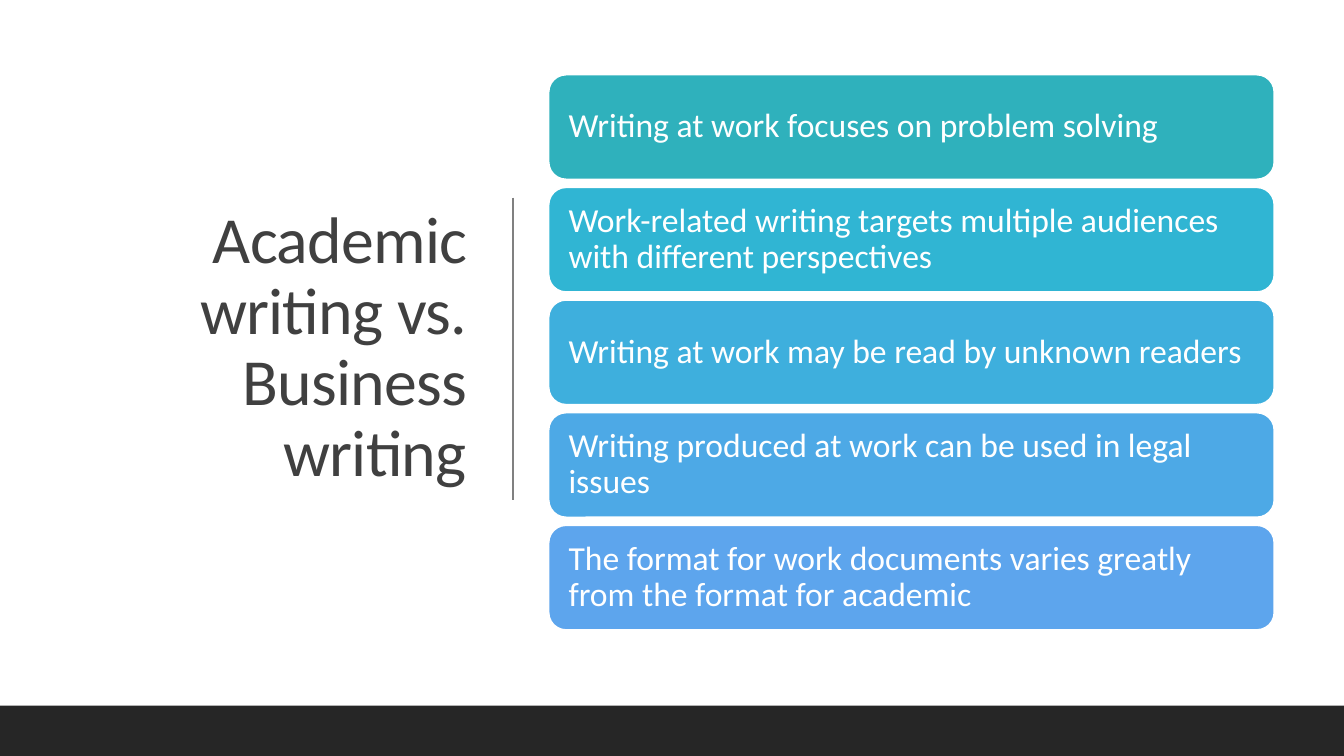
from lxml import etree
from pptx import Presentation
from pptx.dml.color import RGBColor
from pptx.enum.shapes import MSO_CONNECTOR, MSO_SHAPE
from pptx.enum.text import MSO_ANCHOR, MSO_AUTO_SIZE, PP_ALIGN
from pptx.oxml.ns import qn
from pptx.util import Pt

COLORS = {"white": "FFFFFF", "title": "404040", "divider": "808080", "footer": "262626"}
FONT = "Calibri"
PAGE_WIDTH, PAGE_HEIGHT = 960, 540
TITLE_BOX = (50.4, 49.7, 290.2, 398.2)
DIVIDER_BOX = (366.5, 141.1, 0, 216)
FOOTER_BOX = (0, 504, PAGE_WIDTH, 36)
CARDS_BOX = (391.9, 53.3, 518.4, 396.7)
CARD_GAP = 5.6
CARD_INSET = 10.6

CARDS = [
    ("Writing at work focuses on problem solving", "2FB1BC"),
    ("Work-related writing targets multiple audiences with different perspectives", "30B5D3"),
    ("Writing at work may be read by unknown readers", "3EAFDD"),
    ("Writing produced at work can be used in legal issues", "4DA9E6"),
    ("The format for work documents varies greatly from the format for academic", "5DA5ED"),
]


def rgb(name):
    return RGBColor.from_string(COLORS[name])


def write(frame, text, size, color, align):
    frame.text = text
    frame.word_wrap = True
    frame.auto_size = MSO_AUTO_SIZE.NONE
    frame.vertical_anchor = MSO_ANCHOR.MIDDLE
    para = frame.paragraphs[0]
    para.alignment = align
    para.line_spacing = 0.9
    span = para.runs[0]
    span.font.name = FONT
    span.font.size = Pt(size)
    span.font.color.rgb = rgb(color)
    return span


def add_title(page, box):
    title = page.shapes.title
    title.left, title.top, title.width, title.height = map(Pt, box)
    span = write(title.text_frame, "Academic writing vs. Business writing",
                 47, "title", PP_ALIGN.RIGHT)
    span.font._element.set("spc", "-50")


def add_divider(page, box):
    left, top, width, height = box
    line = page.shapes.add_connector(MSO_CONNECTOR.STRAIGHT, Pt(left), Pt(top),
                                     Pt(left + width), Pt(top + height))
    line.line.color.rgb = rgb("divider")
    line.line.width = Pt(1)
    etree.SubElement(line._element.spPr, qn("a:effectLst"))


def add_footer(page, box):
    bar = page.shapes.add_shape(MSO_SHAPE.RECTANGLE, *map(Pt, box))
    bar.shadow.inherit = False
    bar.fill.solid()
    bar.fill.fore_color.rgb = rgb("footer")
    bar.line.fill.background()


def add_cards(page, box):
    left, top, width, height = box
    pitch = (height + CARD_GAP) / len(CARDS)
    for index, (text, fill) in enumerate(CARDS):
        card = page.shapes.add_shape(MSO_SHAPE.ROUNDED_RECTANGLE, Pt(left),
                                     Pt(top + index * pitch), Pt(width), Pt(pitch - CARD_GAP))
        card.shadow.inherit = False
        card.fill.solid()
        card.fill.fore_color.rgb = RGBColor.from_string(fill)
        card.line.color.rgb = rgb("white")
        card.line.width = Pt(1.25)
        frame = card.text_frame
        frame.margin_left = frame.margin_right = Pt(CARD_INSET)
        frame.margin_top = frame.margin_bottom = Pt(CARD_INSET)
        write(frame, text, 24, "white", PP_ALIGN.LEFT)


def main():
    deck = Presentation()
    deck.slide_width, deck.slide_height = Pt(PAGE_WIDTH), Pt(PAGE_HEIGHT)
    page = deck.slides.add_slide(deck.slide_layouts.get_by_name("Title Only"))
    page.background.fill.solid()
    page.background.fill.fore_color.rgb = rgb("white")
    add_title(page, TITLE_BOX)
    add_divider(page, DIVIDER_BOX)
    add_footer(page, FOOTER_BOX)
    add_cards(page, CARDS_BOX)
    deck.save("out.pptx")


if __name__ == "__main__":
    main()
